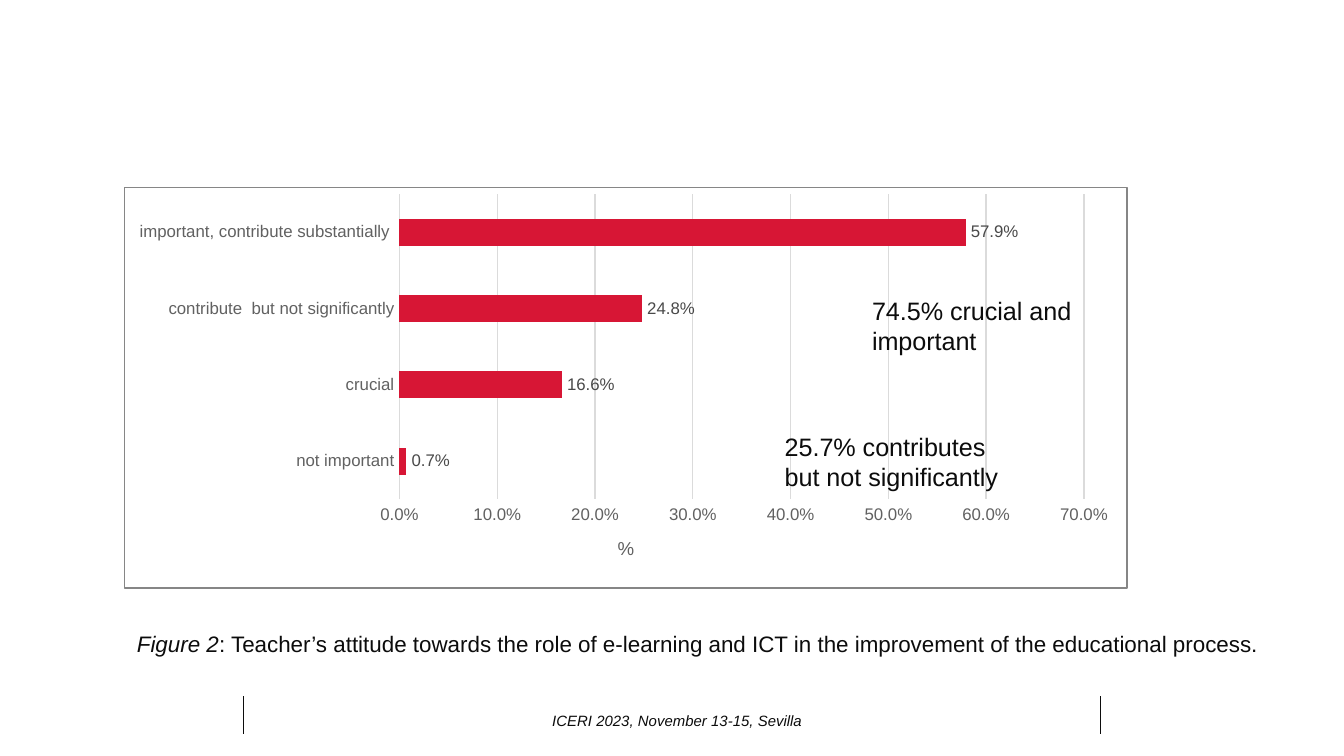
"""Build a slide with a bar chart of teachers' attitudes, callouts, caption and footer."""
from dataclasses import dataclass

from lxml import etree
from pptx import Presentation
from pptx import util as u
from pptx.chart.data import CategoryChartData
from pptx.dml.color import RGBColor
from pptx.enum import chart as charts, shapes, text
from pptx.oxml import parse_xml
from pptx.oxml.ns import nsdecls, qn

INK, GREY, LABEL, GRID, RED, BORDER = "0C0C0C", "616161", "494949", "DBDBDB", "D71635", "868686"
SLIDE_WIDTH = 10
SLIDE_HEIGHT = SLIDE_WIDTH * 9 / 16
CHART_WIDTH, CHART_HEIGHT = 7.47, 2.99
ATTITUDES = {
    "not important": 0.007,
    "crucial": 0.166,
    "contribute  but not significantly": 0.248,
    "important, contribute substantially ": 0.579,
}


@dataclass
class Run:
    text: str
    italic: bool = False


@dataclass
class Note:
    box: tuple[float, float, float, float]
    runs: list[Run]
    size: float
    wrap: bool = True
    align: text.PP_ALIGN = text.PP_ALIGN.LEFT
    anchor: text.MSO_ANCHOR = text.MSO_ANCHOR.TOP


NOTES = [
    Note((6.39, 2.15, 1.9, 0.56), [Run("74.5% crucial and important")], 13.5),
    Note((5.74, 3.16, 1.82, 0.56), [Run("25.7% contributes but not significantly")], 13.5),
]
CAPTION = Note((0.92, 4.64, 8.62, 0.3), [
    Run("Figure 2", True),
    Run(": Teacher’s attitude towards the role of e-learning and ICT "
        "in the improvement of the educational process."),
], 12, wrap=False)
FOOTER = Note((2.24, 5.21, 5.6, 0.3), [Run("ICERI 2023, November 13-15, Sevilla", True)], 8,
              align=text.PP_ALIGN.CENTER, anchor=text.MSO_ANCHOR.MIDDLE)


def paint(color_format, value: str) -> None:
    color_format.rgb = RGBColor.from_string(value)


def apply(target, values: dict) -> None:
    for name, value in values.items():
        setattr(target, name, value)


def style_font(font, size: float, color: str, italic: bool = False) -> None:
    apply(font, {"name": "Arial", "size": u.Pt(size), "bold": False, "italic": italic})
    paint(font.color, color)


def style_line(line, color: str, width: float) -> None:
    line.width = u.Pt(width)
    paint(line.color, color)


def add_note(slide, note: Note) -> None:
    frame = slide.shapes.add_textbox(*map(u.Inches, note.box)).text_frame
    apply(frame, {"word_wrap": note.wrap, "vertical_anchor": note.anchor})
    paragraph = frame.paragraphs[0]
    paragraph.alignment = note.align
    for part in note.runs:
        run = paragraph.add_run()
        run.text = part.text
        style_font(run.font, note.size, INK, part.italic)


def add_rule(slide, x: float) -> None:
    ends = map(u.Inches, (x, 5.18, x, 5.46))
    rule = slide.shapes.add_connector(shapes.MSO_CONNECTOR.STRAIGHT, *ends)
    style_line(rule.line, INK, 0.5)
    etree.SubElement(rule._element.spPr, qn("a:effectLst"))


def place(element, index: int, modes: dict, inches: dict) -> None:
    for previous in element.findall(qn("c:layout")):
        element.remove(previous)
    spans = {"x": CHART_WIDTH, "y": CHART_HEIGHT, "w": CHART_WIDTH, "h": CHART_HEIGHT}
    settings = modes | {name: length / spans[name] for name, length in inches.items()}
    entries = "".join(f'<c:{name} val="{value}"/>' for name, value in settings.items())
    element.insert(index, parse_xml(
        f'<c:layout {nsdecls("c")}><c:manualLayout>{entries}</c:manualLayout></c:layout>'))


def style_axes(chart) -> None:
    for axis in (chart.category_axis, chart.value_axis):
        apply(axis, {"major_tick_mark": charts.XL_TICK_MARK.NONE,
                     "minor_tick_mark": charts.XL_TICK_MARK.NONE})
        style_font(axis.tick_labels.font, 9, GREY)
    style_line(chart.category_axis.format.line, GRID, 0.75)

    shares = chart.value_axis
    apply(shares, {"minimum_scale": 0, "maximum_scale": 0.7, "major_unit": 0.1,
                   "has_major_gridlines": True})
    apply(shares.tick_labels, {"number_format": "0.0%", "number_format_is_linked": False})
    shares.format.line.fill.background()
    style_line(shares.major_gridlines.format.line, GRID, 0.75)
    unit = shares.axis_title.text_frame.paragraphs[0].add_run()
    unit.text = "%"
    style_font(unit.font, 10, GREY)
    place(shares.axis_title._element, 1,
          {"xMode": "edge", "yMode": "edge"}, {"x": 3.65, "y": 2.58})


def add_attitude_chart(slide) -> None:
    data = CategoryChartData(number_format="0.0%")
    data.categories = list(ATTITUDES)
    data.add_series("Series 1", list(ATTITUDES.values()))
    box = map(u.Inches, (0.92, 1.39, CHART_WIDTH, CHART_HEIGHT))
    chart = slide.shapes.add_chart(charts.XL_CHART_TYPE.BAR_CLUSTERED, *box, data).chart
    apply(chart, {"has_legend": False, "has_title": False})
    style_font(chart.font, 10, INK)
    style_axes(chart)

    plot = chart.plots[0]
    apply(plot, {"gap_width": 182, "vary_by_categories": False})
    bars = plot.series[0]
    bars.format.fill.solid()
    paint(bars.format.fill.fore_color, RED)
    labels = bars.data_labels
    apply(labels, {"show_value": True, "number_format": "0.0%", "number_format_is_linked": False,
                   "position": charts.XL_LABEL_POSITION.OUTSIDE_END})
    style_font(labels.font, 9, LABEL)

    root = chart._chartSpace
    place(root.find(".//" + qn("c:plotArea")), 0,
          {"layoutTarget": "inner", "xMode": "edge", "yMode": "edge"},
          {"x": 2.05, "y": 0.05, "w": 5.1, "h": 2.28})
    root.find(qn("c:chart")).addnext(parse_xml(
        f'<c:spPr {nsdecls("c", "a")}><a:noFill/><a:ln w="{u.Pt(0.75)}"><a:solidFill>'
        f'<a:srgbClr val="{BORDER}"/></a:solidFill></a:ln></c:spPr>'))


def main() -> None:
    deck = Presentation()
    apply(deck, {"slide_width": u.Inches(SLIDE_WIDTH), "slide_height": u.Inches(SLIDE_HEIGHT)})
    slide = deck.slides.add_slide(deck.slide_layouts[6])
    for x in (1.81, 8.19):
        add_rule(slide, x)
    add_note(slide, FOOTER)
    add_note(slide, CAPTION)
    add_attitude_chart(slide)
    for note in NOTES:
        add_note(slide, note)
    deck.save("out.pptx")


if __name__ == "__main__":
    main()
